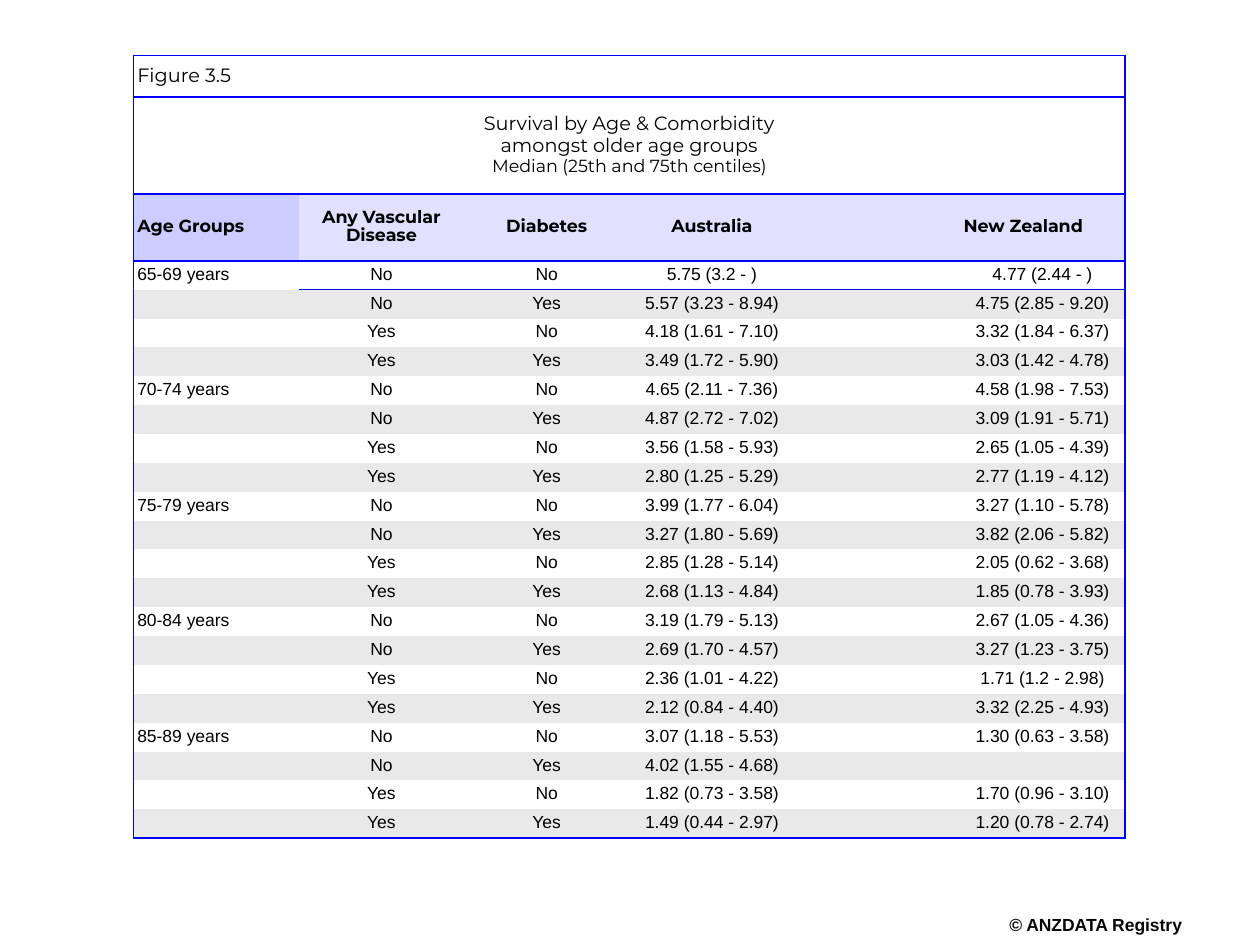
import itertools
import lxml.etree
import pptx
import pptx.dml.color
import pptx.enum.text
import pptx.oxml.ns
import pptx.util

Inches = pptx.util.Inches
Pt = pptx.util.Pt
qn = pptx.oxml.ns.qn
LEFT = pptx.enum.text.PP_ALIGN.LEFT
CENTER = pptx.enum.text.PP_ALIGN.CENTER
MIDDLE = pptx.enum.text.MSO_ANCHOR.MIDDLE
NO_STYLE = "{2D5ABB26-0587-4C30-8999-92F81FD0307C}"
BORDER = "0000FF"
COLUMNS = 6

HEADINGS = ["Age Groups", "Any Vascular Disease", "Diabetes", "Australia", "", "New Zealand"]
SURVIVAL = {
    "65-69 years": [("5.75 (3.2 - )", "4.77 (2.44 - )"),
                    ("5.57 (3.23 - 8.94)", "4.75 (2.85 - 9.20)"),
                    ("4.18 (1.61 - 7.10)", "3.32 (1.84 - 6.37)"),
                    ("3.49 (1.72 - 5.90)", "3.03 (1.42 - 4.78)")],
    "70-74 years": [("4.65 (2.11 - 7.36)", "4.58 (1.98 - 7.53)"),
                    ("4.87 (2.72 - 7.02)", "3.09 (1.91 - 5.71)"),
                    ("3.56 (1.58 - 5.93)", "2.65 (1.05 - 4.39)"),
                    ("2.80 (1.25 - 5.29)", "2.77 (1.19 - 4.12)")],
    "75-79 years": [("3.99 (1.77 - 6.04)", "3.27 (1.10 - 5.78)"),
                    ("3.27 (1.80 - 5.69)", "3.82 (2.06 - 5.82)"),
                    ("2.85 (1.28 - 5.14)", "2.05 (0.62 - 3.68)"),
                    ("2.68 (1.13 - 4.84)", "1.85 (0.78 - 3.93)")],
    "80-84 years": [("3.19 (1.79 - 5.13)", "2.67 (1.05 - 4.36)"),
                    ("2.69 (1.70 - 4.57)", "3.27 (1.23 - 3.75)"),
                    ("2.36 (1.01 - 4.22)", "1.71 (1.2 - 2.98)"),
                    ("2.12 (0.84 - 4.40)", "3.32 (2.25 - 4.93)")],
    "85-89 years": [("3.07 (1.18 - 5.53)", "1.30 (0.63 - 3.58)"),
                    ("4.02 (1.55 - 4.68)", ""),
                    ("1.82 (0.73 - 3.58)", "1.70 (0.96 - 3.10)"),
                    ("1.49 (0.44 - 2.97)", "1.20 (0.78 - 2.74)")],
}


def rgb(color):
    return pptx.dml.color.RGBColor.from_string(color)


def write(p, text, font, size, align=LEFT, bold=False, color="000000", before=0, after=0):
    p.alignment = align
    p.line_spacing = 0.85
    if before:
        p.space_before = Pt(before)
    if after:
        p.space_after = Pt(after)
    if not text:
        lxml.etree.SubElement(p._p, qn("a:endParaRPr"), sz=str(size * 100))
        return
    r = p.add_run()
    r.text = text
    r.font.name = font
    r.font.size = Pt(size)
    r.font.bold = bold
    r.font.color.rgb = rgb(color)


def format_cell(cell, sides="", fill=None, inset=0.02):
    cell.vertical_anchor = MIDDLE
    cell.margin_left = cell.margin_right = Inches(0.03)
    cell.margin_top = cell.margin_bottom = Inches(inset)
    tcPr = cell._tc.get_or_add_tcPr()
    for side in "LRTB":
        if side in sides:
            ln = lxml.etree.SubElement(tcPr, qn("a:ln" + side), w=str(Pt(1)))
            solid = lxml.etree.SubElement(ln, qn("a:solidFill"))
            lxml.etree.SubElement(solid, qn("a:srgbClr"), val=BORDER)
    if fill:
        cell.fill.solid()
        cell.fill.fore_color.rgb = rgb(fill)
    else:
        cell.fill.background()


def outer_sides(column):
    return {0: "L", COLUMNS - 1: "R"}.get(column, "")


def add_title_row(table, row, lines, align):
    cells = [table.cell(row, column) for column in range(COLUMNS)]
    cells[0].merge(cells[-1])
    for column, cell in enumerate(cells):
        format_cell(cell, "LRTB" if column == 0 else "TB" + outer_sides(column), inset=0.03)
    tf = cells[0].text_frame
    for i, (text, size) in enumerate(lines):
        p = tf.add_paragraph() if i else tf.paragraphs[0]
        write(p, text, "Montserrat", size, align, before=1 if i else 0)


def add_heading_row(table, row):
    for column, text in enumerate(HEADINGS):
        cell = table.cell(row, column)
        sides = "LT" if column == 0 else "TB" + outer_sides(column)
        format_cell(cell, sides, "E1E1FF" if column else "CCCCFF")
        align = LEFT if column in (0, COLUMNS - 1) else CENTER
        write(cell.text_frame.paragraphs[0], text, "Montserrat", 10, align, bold=True)


def add_body_rows(table, first, rows):
    for i, values in enumerate(rows):
        for column, text in enumerate(values):
            cell = table.cell(first + i, column)
            sides = outer_sides(column)
            if i == 0 and column:
                sides += "T"
            if i == len(rows) - 1:
                sides += "B"
            format_cell(cell, sides, "E9E9E9" if i % 2 else None)
            align = CENTER if column else LEFT
            write(cell.text_frame.paragraphs[0], text, "Arial", 10, align,
                  after=14 if text else 0)


def add_survival_table(slide, left, top, width, height):
    rows = []
    for age, results in SURVIVAL.items():
        conditions = itertools.product(["No", "Yes"], repeat=2)
        for i, ((vascular, diabetes), (australia, zealand)) in enumerate(zip(conditions, results)):
            rows.append(["" if i else age, vascular, diabetes, australia, "", zealand])
    top_heights = [Inches(0.33), Inches(0.77), Inches(0.53)]
    body_height = (height - sum(top_heights)) // len(rows)
    heights = top_heights + [body_height] * len(rows)

    frame = slide.shapes.add_table(len(heights), COLUMNS, left, top, width, height)
    table = frame.table
    table.first_row = False
    table.horz_banding = False
    table._tbl.tblPr.find(qn("a:tableStyleId")).text = NO_STYLE
    for column in table.columns:
        column.width = width // COLUMNS
    for row, row_height in zip(table.rows, heights):
        row.height = row_height

    add_title_row(table, 0, [("Figure 3.5", 11)], LEFT)
    add_title_row(table, 1, [("Survival by Age & Comorbidity", 11),
                             ("amongst older age groups", 11),
                             ("Median (25th and 75th centiles)", 10)], CENTER)
    add_heading_row(table, 2)
    add_body_rows(table, 3, rows)


def add_copyright(slide, left, top, width, height):
    tf = slide.shapes.add_textbox(left, top, width, height).text_frame
    tf.margin_left = tf.margin_right = tf.margin_top = tf.margin_bottom = 0
    tf.word_wrap = False
    write(tf.paragraphs[0], "© ANZDATA Registry", "Arial", 10, CENTER, True, "080808")


def main():
    prs = pptx.Presentation()
    prs.slide_width = Inches(10)
    prs.slide_height = Inches(7.5)
    s = prs.slides.add_slide(prs.slide_layouts[6])
    add_copyright(s, Inches(7.99), Inches(7.28), Inches(1.41), Inches(0.17))
    add_survival_table(s, Inches(1.06), Inches(0.44), Inches(7.87), Inches(6.22))
    prs.save("out.pptx")


if __name__ == "__main__":
    main()
